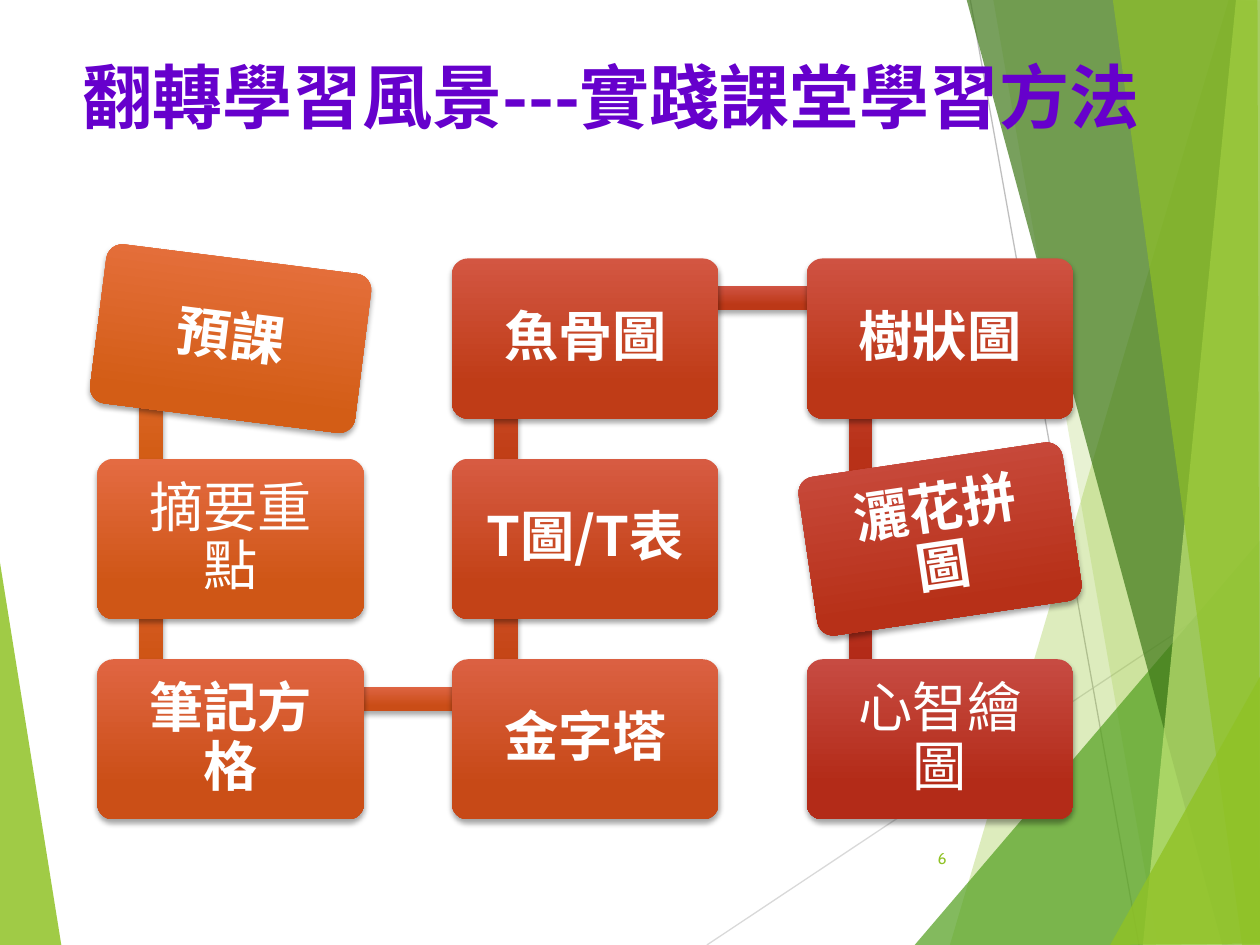
from lxml import etree
from pptx import Presentation
from pptx import util as u
from pptx.dml.color import RGBColor
from pptx.enum import shapes, text
from pptx.oxml import ns

LIME = RGBColor(0x90, 0xC2, 0x26)
PALE_LIME = RGBColor(0xC0, 0xE4, 0x74)
GREEN = RGBColor(0x54, 0xA0, 0x21)
DARK_GREEN = RGBColor(0x3F, 0x78, 0x19)
LIGHT_GRAY = RGBColor(0xD9, 0xD9, 0xD9)
GRAY = RGBColor(0xBF, 0xBF, 0xBF)
PURPLE = RGBColor(0x66, 0x00, 0xCC)
WHITE = RGBColor(0xFF, 0xFF, 0xFF)
# Top and bottom gradient colours, in reading order along the chain
CARD_COLORS = [
    (RGBColor(0xE8, 0x72, 0x42), RGBColor(0xD3, 0x5D, 0x16)),
    (RGBColor(0xE4, 0x6B, 0x42), RGBColor(0xCF, 0x56, 0x16)),
    (RGBColor(0xE0, 0x65, 0x42), RGBColor(0xCB, 0x4F, 0x17)),
    (RGBColor(0xDB, 0x60, 0x42), RGBColor(0xC7, 0x49, 0x17)),
    (RGBColor(0xD7, 0x5B, 0x42), RGBColor(0xC3, 0x42, 0x17)),
    (RGBColor(0xD3, 0x56, 0x42), RGBColor(0xBF, 0x3C, 0x17)),
    (RGBColor(0xCF, 0x52, 0x42), RGBColor(0xBB, 0x36, 0x17)),
    (RGBColor(0xCB, 0x4E, 0x42), RGBColor(0xB7, 0x30, 0x18)),
    (RGBColor(0xC7, 0x4B, 0x42), RGBColor(0xB3, 0x2B, 0x18)),
]
LINK_COLORS = [
    (RGBColor(0xE8, 0x72, 0x42), RGBColor(0xD3, 0x5D, 0x16)),
    (RGBColor(0xE3, 0x6B, 0x42), RGBColor(0xCF, 0x55, 0x16)),
    (RGBColor(0xDE, 0x64, 0x42), RGBColor(0xCA, 0x4D, 0x17)),
    (RGBColor(0xDA, 0x5E, 0x42), RGBColor(0xC5, 0x46, 0x17)),
    (RGBColor(0xD5, 0x58, 0x42), RGBColor(0xC1, 0x3F, 0x17)),
    (RGBColor(0xD0, 0x53, 0x42), RGBColor(0xBC, 0x38, 0x17)),
    (RGBColor(0xCB, 0x4F, 0x42), RGBColor(0xB8, 0x31, 0x18)),
    (RGBColor(0xC7, 0x4B, 0x42), RGBColor(0xB3, 0x2B, 0x18)),
]
CJK, LATIN = "Noto Sans CJK SC", "Cabin"

presentation = Presentation()
presentation.slide_width, presentation.slide_height = u.Cm(25.4), u.Cm(19.05)
slide = presentation.slides.add_slide(presentation.slide_layouts[6])


def write(shape, words, font, size, color, bold, align, inset):
    """Put one middle-anchored line of text into a shape."""
    frame = shape.text_frame
    frame.word_wrap = True
    frame.vertical_anchor = text.MSO_ANCHOR.MIDDLE
    frame.margin_left = frame.margin_right = u.Cm(inset)
    frame.margin_top = frame.margin_bottom = u.Cm(inset)
    paragraph = frame.paragraphs[0]
    paragraph.alignment = align
    run = paragraph.add_run()
    run.text = words
    run.font.name, run.font.size, run.font.bold = font, u.Pt(size), bold
    run.font.color.rgb = color
    etree.SubElement(run.font._element, ns.qn("a:ea"), typeface=font)
    return paragraph


def add_block(kind, left, top, width, height, colors):
    """Add a shape with a downward gradient and a soft shadow."""
    shape = slide.shapes.add_shape(kind, u.Cm(left), u.Cm(top), u.Cm(width), u.Cm(height))
    shape.line.fill.background()
    shape.fill.gradient()
    shape.fill.gradient_angle = 270
    for stop, color, position in zip(shape.fill.gradient_stops, colors, (0, 0.78)):
        stop.color.rgb = color
        stop.position = position
    shape.shadow.inherit = False
    effects = shape._element.spPr.find(ns.qn("a:effectLst"))
    shadow = etree.SubElement(effects, ns.qn("a:outerShdw"), blurRad=str(u.Pt(3)),
                              dist=str(u.Pt(2)), dir="5400000", rotWithShape="0")
    black = etree.SubElement(shadow, ns.qn("a:srgbClr"), val="000000")
    etree.SubElement(black, ns.qn("a:alpha"), val="35000")
    return shape


# Thin background lines
for x1, y1, x2, y2, color in [(14.25, 19.05, 25.43, 11.61, LIGHT_GRAY),
                              (19.56, 0, 22.96, 19.05, GRAY)]:
    line = slide.shapes.add_connector(shapes.MSO_CONNECTOR.STRAIGHT,
                                      u.Cm(x1), u.Cm(y1), u.Cm(x2), u.Cm(y2))
    line.line.color.rgb = color
    line.line.width = u.Pt(0.75)
    etree.SubElement(line._element.spPr, ns.qn("a:effectLst"))

# Translucent background facets: colour, opacity in percent, corners
facets = [
    (LIME, 85, [(-0.03, 11.15), (1.24, 19.07), (-0.03, 19.05)]),
    (LIME, 30, [(24.77, 0), (19.15, 19.05), (25.45, 19.07), (25.43, 0.03)]),
    (LIME, 20, [(20.02, -0.03), (23.34, 19.05), (25.43, 19.05), (25.43, -0.03)]),
    (GREEN, 72, [(18.44, 19.05), (25.4, 10.9), (25.43, 19.05)]),
    (DARK_GREEN, 70, [(19.48, -0.03), (24.64, 19.05), (25.43, 19.02), (25.43, -0.03)]),
    (PALE_LIME, 70, [(24.92, -0.03), (23.04, 19.05), (25.43, 19.05), (25.4, -0.03)]),
    (LIME, 65, [(22.43, -0.03), (25.04, 19.05), (25.4, 19.05), (25.35, -0.03)]),
    (LIME, 80, [(22.38, 19.05), (25.43, 13.59), (25.43, 19.02)]),
]
for color, opacity, corners in facets:
    points = [(u.Cm(x), u.Cm(y)) for x, y in corners]
    builder = slide.shapes.build_freeform(*points[0])
    builder.add_line_segments(points[1:], close=True)
    facet = builder.convert_to_shape()
    facet.shadow.inherit = False
    facet.line.fill.background()
    facet.fill.solid()
    facet.fill.fore_color.rgb = color
    rgb = facet._element.spPr.find(".//" + ns.qn("a:srgbClr"))
    etree.SubElement(rgb, ns.qn("a:alpha"), val=str(opacity * 1000))

# Slide number and title
number = slide.shapes.add_textbox(u.Cm(17.91), u.Cm(16.79), u.Cm(1.42), u.Cm(1.02))
write(number, "6", LATIN, 9, LIME, False, text.PP_ALIGN.RIGHT, 0.25)
title = slide.shapes.add_textbox(u.Cm(0.89), u.Cm(0.69), u.Cm(22.86), u.Cm(2.49))
write(title, "翻轉學習風景---實踐課堂學習方法", CJK, 40, PURPLE, True, text.PP_ALIGN.CENTER, 0.25)

# Chain of cards: down the first column, up the second, down the third
cards = [
    ("預課", CJK, 7.2), ("摘要重點", LATIN, 0), ("筆記方格", CJK, 0),
    ("金字塔", CJK, 0), ("T圖/T表", CJK, 0), ("魚骨圖", CJK, 0),
    ("樹狀圖", CJK, 0), ("灑花拼圖", CJK, 351.6), ("心智繪圖", LATIN, 0),
]
GRID_LEFT, GRID_TOP, COLUMN_STEP, ROW_STEP = 1.96, 5.21, 7.15, 4.04
CARD_WIDTH, CARD_HEIGHT, THICKNESS = 5.38, 3.23, 0.48
LINK_X, LINK_Y = 1.09, 0.8

spots = []
for index in range(len(cards)):
    column, row = divmod(index, 3)
    if column == 1:
        row = 2 - row
    spots.append((GRID_LEFT + column * COLUMN_STEP, GRID_TOP + row * ROW_STEP))

for index, (words, font, tilt) in enumerate(cards):
    left, top = spots[index]
    # Link to the next card, drawn beneath both
    if index < len(LINK_COLORS):
        next_left, next_top = spots[index + 1]
        start_x, start_y = left + LINK_X, min(top, next_top) + LINK_Y
        if next_left == left:
            bounds = (start_x - THICKNESS / 2, start_y, THICKNESS, ROW_STEP)
        else:
            bounds = (start_x, start_y - THICKNESS / 2, COLUMN_STEP, THICKNESS)
        add_block(shapes.MSO_SHAPE.RECTANGLE, *bounds, LINK_COLORS[index])
    card = add_block(shapes.MSO_SHAPE.ROUNDED_RECTANGLE, left, top,
                     CARD_WIDTH, CARD_HEIGHT, CARD_COLORS[index])
    card.adjustments[0] = 0.1
    card.rotation = tilt
    paragraph = write(card, words, font, 31, WHITE, font == CJK, text.PP_ALIGN.CENTER, 0.43)
    paragraph.line_spacing = 0.9

presentation.save("out.pptx")
